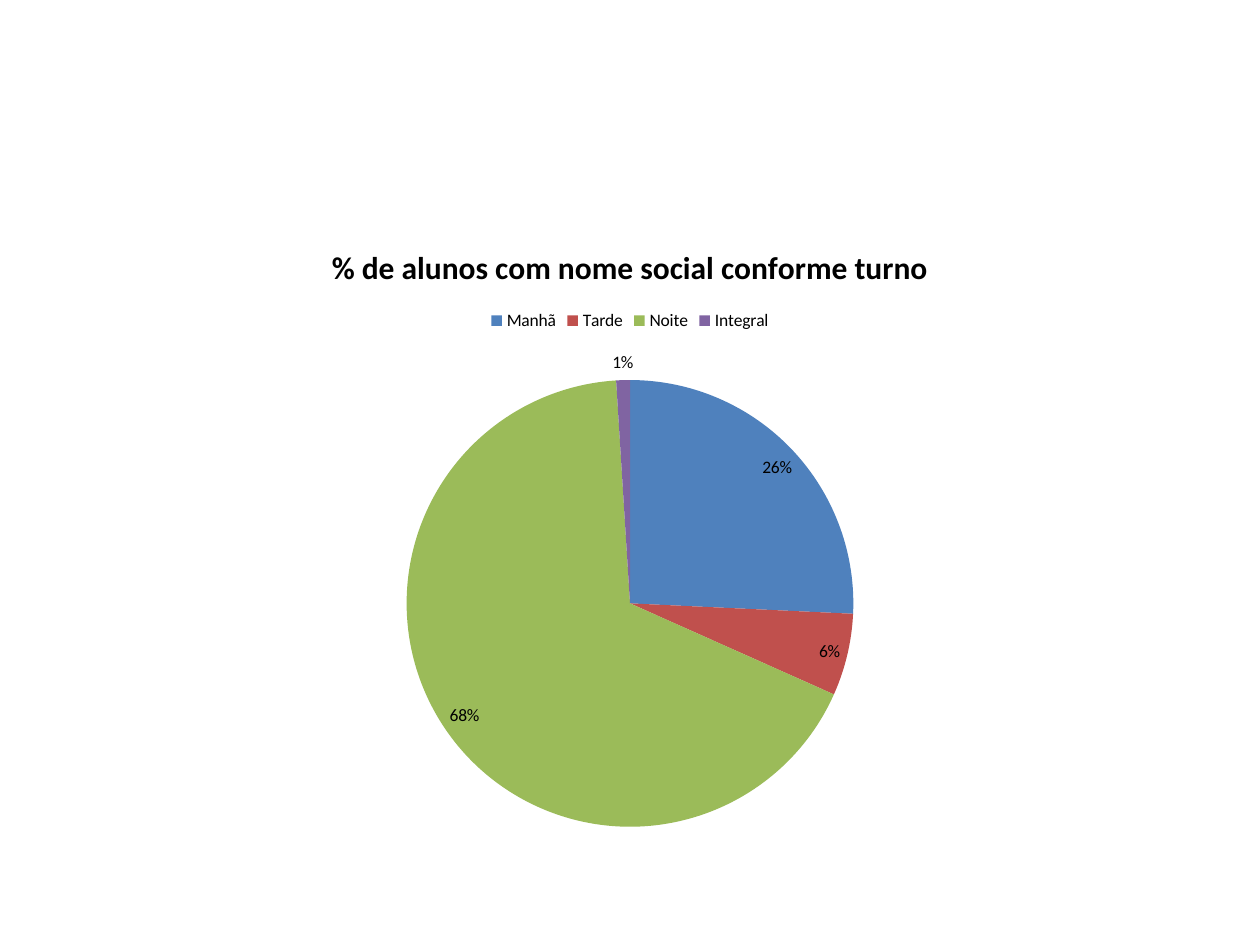
from pptx import Presentation
from pptx.chart.data import CategoryChartData
from pptx.dml.color import RGBColor
from pptx.enum.chart import XL_CHART_TYPE, XL_LABEL_POSITION, XL_LEGEND_POSITION
from pptx.util import Inches, Pt

PIE = XL_CHART_TYPE.PIE
BEST_FIT = XL_LABEL_POSITION.BEST_FIT
TOP = XL_LEGEND_POSITION.TOP
BLANK = 6

TITLE = "% de alunos com nome social conforme turno"
SHIFTS = {
    "Manhã": (26, "4F81BD"),
    "Tarde": (6, "C0504D"),
    "Noite": (68, "9BBB59"),
    "Integral": (1, "8064A2"),
}


def color(value):
    return RGBColor.from_string(value)


class Deck:
    body = {"name": "Calibri", "size": Pt(10), "bold": False}
    heading = {"name": "Calibri", "size": Pt(18), "bold": True}
    ink = "000000"

    def __init__(self, prs):
        self.prs = prs
        self.s = prs.slides.add_slide(prs.slide_layouts[BLANK])

    def format(self, font, style):
        for key, value in style.items():
            setattr(font, key, value)
        font.color.rgb = color(self.ink)

    def pie(self, title, slices, left, top, width, height):
        data = CategoryChartData()
        data.categories = list(slices)
        data.add_series(title, [value for value, _ in slices.values()])
        w, h = self.prs.slide_width, self.prs.slide_height
        box = int(left * w), int(top * h), int(width * w), int(height * h)
        chart = self.s.shapes.add_chart(PIE, *box, data).chart
        self.format(chart.font, self.body)

        chart.has_title = True
        tf = chart.chart_title.text_frame
        tf.text = title
        self.format(tf.paragraphs[0].runs[0].font, self.heading)
        chart.chart_title.include_in_layout = False

        chart.has_legend = True
        chart.legend.position = TOP
        chart.legend.include_in_layout = False
        self.format(chart.legend.font, self.body)

        plot = chart.plots[0]
        plot.vary_by_categories = True
        plot.has_data_labels = True
        labels = plot.data_labels
        options = {
            "show_value": True,
            "number_format": '0"%"',
            "number_format_is_linked": False,
            "position": BEST_FIT,
        }
        for key, value in options.items():
            setattr(labels, key, value)
        self.format(labels.font, self.body)

        for i, (_, fill) in enumerate(slices.values()):
            point = plot.series[0].points[i].format
            point.fill.solid()
            point.fill.fore_color.rgb = color(fill)
            point.line.fill.background()


def main():
    prs = Presentation()
    prs.slide_width, prs.slide_height = Inches(10), Inches(7.5)
    deck = Deck(prs)
    deck.pie(TITLE, SHIFTS, left=0.05, top=1.75 / 7.5, width=0.9, height=0.66)
    prs.save("out.pptx")


if __name__ == "__main__":
    main()
